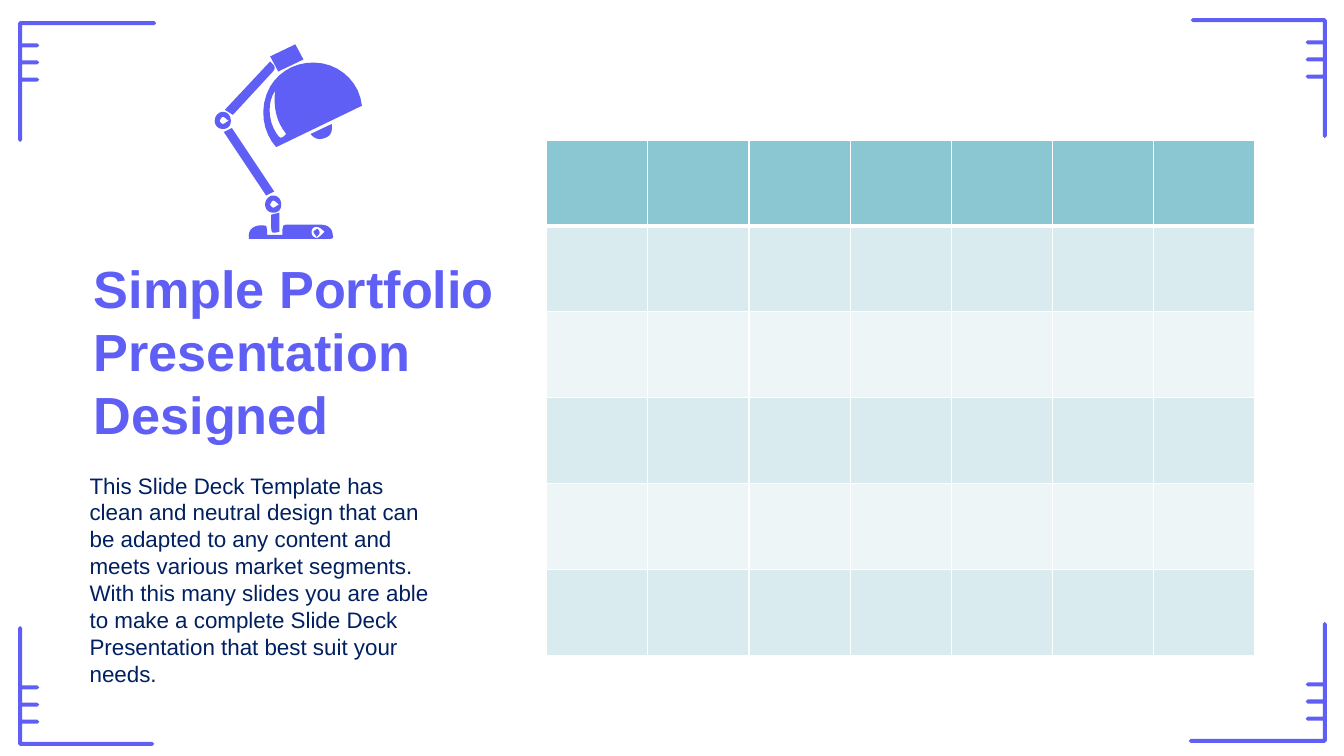
from pptx import Presentation
from pptx.dml.color import RGBColor
from pptx.enum.text import MSO_ANCHOR, MSO_AUTO_SIZE, PP_ALIGN
from pptx.oxml import parse_xml
from pptx.oxml.ns import nsdecls
from pptx.util import Pt

VIOLET = RGBColor(0x5F, 0x5F, 0xF6)
NAVY = RGBColor(0x00, 0x20, 0x60)
TEAL = RGBColor(0x8A, 0xC7, 0xD3)
PALE = RGBColor(0xDA, 0xEB, 0xEF)
MIST = RGBColor(0xED, 0xF5, 0xF7)
WHITE = RGBColor(0xFF, 0xFF, 0xFF)

SCALE = 9144
WIDTH, HEIGHT = 1333, 750
STEPS = 8

STROKE = 4
TICK = 19
TICKS = range(22, 57, 17)

SHADE = [
    [(146, 61), (61, 102), (48, 88, 43, 63, 55, 42),
     (65, 25, 85, 15, 107, 19), (128, 23, 144, 40, 146, 61)],
    [(60, 46), (52, 57, 53, 76, 61, 88), (65, 94, 66, 94, 71, 89),
     (61, 77, 58, 62, 60, 46)],
]
BASE = [
    [(52, 189), (67, 189), (67, 186, 67, 183, 68, 180),
     (69, 179, 70, 179, 72, 179), (106, 179), (112, 179, 117, 183, 117, 189),
     (118, 192, 117, 193, 114, 193), (34, 193), (32, 183, 40, 178, 51, 180),
     (52, 183, 52, 186, 52, 189)],
    [(109, 186), (106, 183, 103, 181, 101, 181), (98, 181, 96, 183, 96, 186),
     (96, 190, 98, 192, 102, 192), (104, 191, 106, 189, 109, 186)],
]
LOWER = [[(17, 83), (59, 146), (51, 150), (9, 87)]]
UPPER = [[(18, 70), (10, 65), (55, 17), (61, 23, 61, 24, 55, 30)]]
CAP = [[(63, 27), (55, 12), (80, 0), (88, 15)]]
BULB = [[(95, 89), (116, 79), (117, 87, 115, 91, 109, 93),
         (104, 95, 99, 94, 95, 89)]]
STEM = [[(56, 169), (64, 167), (64, 186), (56, 188, 56, 187, 56, 180)]]
KNOB = [[(101, 191), (100, 189, 98, 187, 98, 186),
         (98, 185, 100, 184, 102, 183), (103, 184, 104, 185, 104, 187),
         (104, 188, 103, 189, 101, 191)]]
PARTS = [SHADE, BASE, LOWER, UPPER, CAP, BULB, STEM, KNOB]
JOINT = [
    [(8, 0), (13, 0, 16, 4, 16, 9), (16, 14, 13, 17, 8, 17),
     (4, 17, 0, 14, 0, 9), (0, 4, 4, 0, 8, 0)],
    [(14, 9), (11, 7, 10, 5, 8, 5), (7, 5, 5, 8, 5, 9),
     (5, 10, 7, 12, 8, 12), (10, 12, 11, 10, 14, 9)],
]
JOINTS = [(0, 67), (50, 150)]

TITLE = "Simple Portfolio Presentation Designed"
BODY = (
    "This Slide Deck Template has clean and neutral design that can be "
    "adapted to any content and meets various market segments. With this "
    "many slides you are able to make a complete Slide Deck Presentation "
    "that best suit your needs."
)


def px(n):
    return round(n * SCALE)


def blend(a, b, c, d, t):
    u = 1 - t
    return u**3 * a + 3 * u * u * t * b + 3 * u * t * t * c + t**3 * d


def curve(start, bend):
    xs = (start[0], *bend[0::2])
    ys = (start[1], *bend[1::2])
    times = [step / STEPS for step in range(1, STEPS + 1)]
    return [(blend(*xs, t), blend(*ys, t)) for t in times]


def trace(loop):
    points = []
    for seg in loop:
        points += [seg] if len(seg) == 2 else curve(points[-1], seg)
    return points


def draw(shapes, loops, left, top, flipx=1, flipy=1):
    build = None
    for loop in loops:
        first, *rest = [(px(left + flipx * x), px(top + flipy * y))
                        for x, y in trace(loop)]
        if build is None:
            build = shapes.build_freeform(*first, scale=1.0)
        else:
            build.move_to(*first)
        build.add_line_segments(rest, close=True)
    shape = build.convert_to_shape()
    shape.shadow.inherit = False
    shape.fill.solid()
    shape.fill.fore_color.rgb = VIOLET
    shape.line.fill.background()


def corner(slide, left, top, width, height, flipx, flipy):
    half = STROKE // 2
    loop = [(0, half), (half, 0), (width - half, 0), (width, half),
            (width - half, STROKE), (STROKE, STROKE)]
    for y in TICKS:
        loop += [(STROKE, y), (TICK, y), (TICK + half, y + half),
                 (TICK, y + STROKE), (STROKE, y + STROKE)]
    loop += [(STROKE, height - half), (half, height), (0, height - half)]
    draw(slide.shapes, [loop], left, top, flipx, flipy)


def frame(slide):
    west, east = 18, WIDTH - 17
    corner(slide, west, 21, 137, 120, 1, 1)
    corner(slide, east, 18, 135, 119, -1, 1)
    corner(slide, west, 740, 135, 119, 1, -1)
    corner(slide, east, 737, 137, 120, -1, -1)


def lamp(slide, left, top):
    shapes = slide.shapes.add_group_shape().shapes
    for part in PARTS:
        draw(shapes, part, left, top)
    for x, y in JOINTS:
        draw(shapes, JOINT, left + x, top + y)


def write(shape, box, text, size, color, bold):
    shape.left, shape.top, shape.width, shape.height = map(px, box)
    area = shape.text_frame
    area.text = text
    area.word_wrap = True
    area.auto_size = MSO_AUTO_SIZE.NONE
    area.vertical_anchor = MSO_ANCHOR.MIDDLE
    para = area.paragraphs[0]
    para.alignment = PP_ALIGN.LEFT
    para.line_spacing = 1.0
    para.space_before = Pt(0)
    font = para.font
    font.name, font.size, font.bold = "Arial", Pt(size), bold
    font.color.rgb = color


def border(cell, row):
    props = cell._tc.get_or_add_tcPr()
    widths = {"L": 1, "R": 1, "T": 3 if row == 1 else 1,
              "B": 3 if row == 0 else 1}
    for side, width in widths.items():
        props.append(parse_xml(
            f'<a:ln{side} {nsdecls("a")} w="{Pt(width)}"><a:solidFill>'
            f'<a:srgbClr val="{WHITE}"/></a:solidFill></a:ln{side}>'))


def tint(row):
    if row == 0:
        return TEAL
    return PALE if row % 2 else MIST


def grid(slide, box, rows, cols):
    table = slide.shapes.add_table(rows, cols, *map(px, box)).table
    for row in range(rows):
        for col in range(cols):
            cell = table.cell(row, col)
            border(cell, row)
            cell.fill.solid()
            cell.fill.fore_color.rgb = tint(row)


def main():
    deck = Presentation()
    deck.slide_width, deck.slide_height = px(WIDTH), px(HEIGHT)
    slide = deck.slides.add_slide(deck.slide_layouts[5])
    frame(slide)
    write(slide.shapes.title, (83, 235, 440, 226), TITLE, 37.3, VIOLET, True)
    body = slide.shapes.add_textbox(0, 0, 0, 0)
    write(body, (79, 459, 362, 231), BODY, 16, NAVY, False)
    lamp(slide, 213, 44)
    grid(slide, (542, 139, 703, 511), 6, 7)
    deck.save("out.pptx")


if __name__ == "__main__":
    main()
